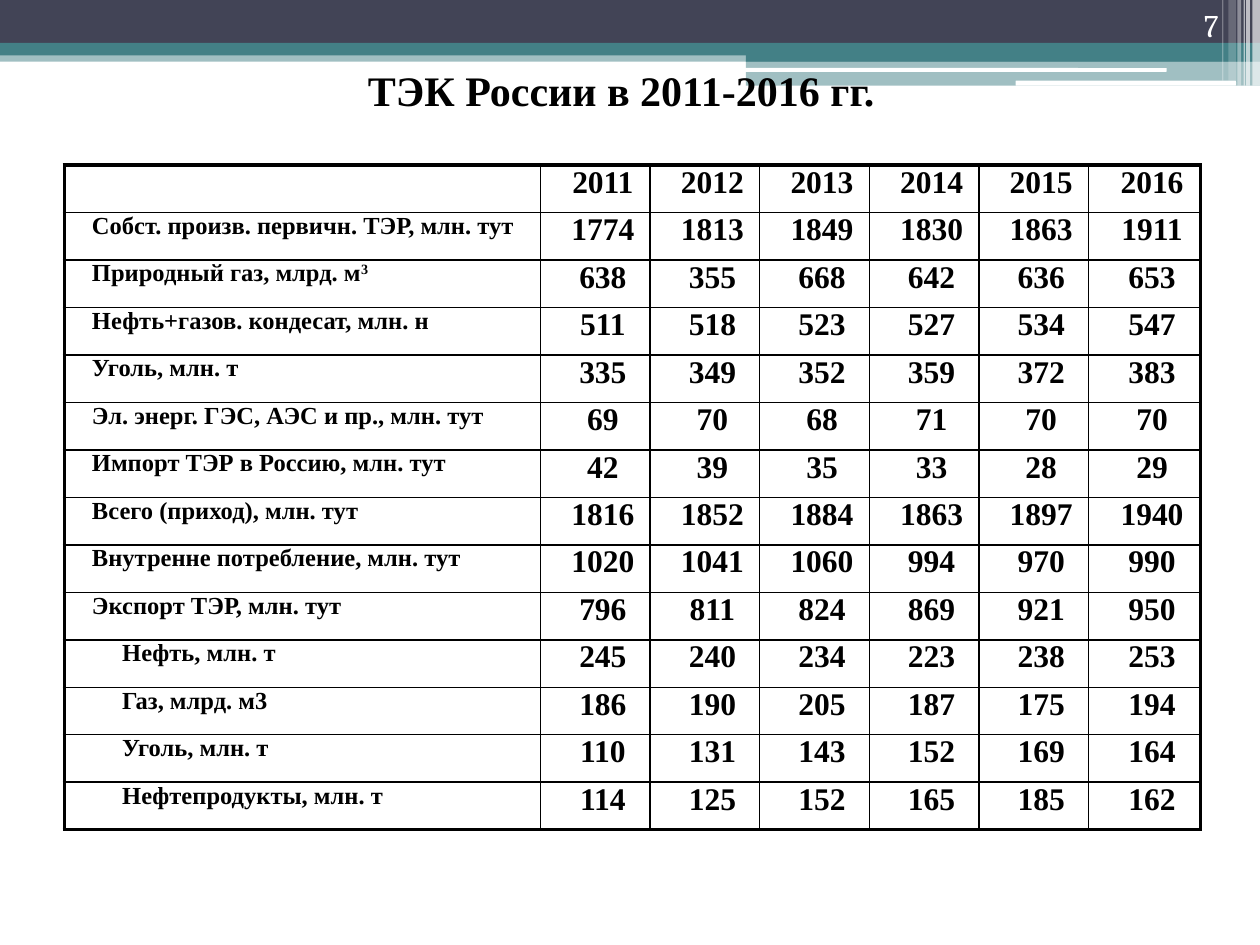
from typing import NamedTuple

import pptx
import pptx.dml.color
import pptx.enum.shapes
import pptx.enum.text
import pptx.oxml
import pptx.oxml.ns
import pptx.util
from pptx.util import Inches

COLORS = {"slate": "424456", "teal": "438086", "white": "FFFFFF", "black": "000000"}
SERIF = "Times New Roman"
ALIGN = pptx.enum.text.PP_ALIGN
ANCHOR = pptx.enum.text.MSO_ANCHOR
SHAPE = pptx.enum.shapes.MSO_SHAPE


class Band(NamedTuple):
    left: float
    top: float
    width: float
    height: float
    color: str
    opacity: int = 100
    rounded: bool = False


class Indicator(NamedTuple):
    label: str
    values: tuple
    superscript: str = ""
    nested: bool = False


BANDS = [
    Band(0, 0.4, 10, 0.09, "teal", 50),
    Band(0, 0, 10, 0.34, "slate"),
    Band(0, 0.34, 10, 0.1, "teal"),
    Band(5.92, 0.39, 4.08, 0.1, "teal"),
    Band(5.92, 0.48, 4.08, 0.2, "teal", 50),
    Band(5.91, 0.54, 3.35, 0.03, "white", rounded=True),
    Band(8.06, 0.64, 1.75, 0.04, "white", rounded=True),
    Band(9.94, 0, 0.06, 0.68, "white", 65),
    Band(9.89, 0, 0.03, 0.68, "white", 65),
    Band(9.87, 0, 0.01, 0.68, "white", 60),
    Band(9.82, 0, 0.03, 0.68, "white", 40),
    Band(9.75, 0, 0.06, 0.64, "white", 20),
    Band(9.7, 0, 0.01, 0.64, "white", 30),
]

INDICATORS = [
    Indicator("", (2011, 2012, 2013, 2014, 2015, 2016)),
    Indicator("Собст. произв. первичн. ТЭР, млн. тут", (1774, 1813, 1849, 1830, 1863, 1911)),
    Indicator("Природный газ, млрд. м", (638, 355, 668, 642, 636, 653), superscript="3"),
    Indicator("Нефть+газов. кондесат, млн. н", (511, 518, 523, 527, 534, 547)),
    Indicator("Уголь, млн. т", (335, 349, 352, 359, 372, 383)),
    Indicator("Эл. энерг. ГЭС, АЭС и пр., млн. тут", (69, 70, 68, 71, 70, 70)),
    Indicator("Импорт ТЭР в Россию, млн. тут", (42, 39, 35, 33, 28, 29)),
    Indicator("Всего (приход), млн. тут", (1816, 1852, 1884, 1863, 1897, 1940)),
    Indicator("Внутренне потребление, млн. тут", (1020, 1041, 1060, 994, 970, 990)),
    Indicator("Экспорт ТЭР, млн. тут", (796, 811, 824, 869, 921, 950)),
    Indicator("Нефть, млн. т", (245, 240, 234, 223, 238, 253), nested=True),
    Indicator("Газ, млрд. м3", (186, 190, 205, 187, 175, 194), nested=True),
    Indicator("Уголь, млн. т", (110, 131, 143, 152, 169, 164), nested=True),
    Indicator("Нефтепродукты, млн. т", (114, 125, 152, 165, 185, 162), nested=True),
]
COLUMN_WIDTHS = [3.78] + [0.87] * 5 + [0.89]
TABLE_HEIGHT = 5.28


def rgb(color: str) -> pptx.dml.color.RGBColor:
    return pptx.dml.color.RGBColor.from_string(COLORS[color])


def format_runs(paragraph, size: float, font: str = SERIF, color: str = "black",
                bold: bool = True) -> None:
    for run in paragraph.runs:
        run.font.size = pptx.util.Pt(size)
        run.font.name = font
        run.font.bold = bold
        run.font.color.rgb = rgb(color)


def draw_band(slide, band: Band) -> None:
    kind = SHAPE.ROUNDED_RECTANGLE if band.rounded else SHAPE.RECTANGLE
    bar = slide.shapes.add_shape(kind, *map(Inches, band[:4]))
    bar.shadow.inherit = False
    bar.line.fill.background()
    bar.fill.solid()
    bar.fill.fore_color.rgb = rgb(band.color)
    if band.opacity < 100:
        tint = bar.fill._xPr.find(".//" + pptx.oxml.ns.qn("a:srgbClr"))
        tint.append(pptx.oxml.parse_xml(
            f'<a:alpha {pptx.oxml.ns.nsdecls("a")} val="{band.opacity * 1000}"/>'))


def draw_text(slide, text: str, box: tuple, align, anchor, **style) -> None:
    frame = slide.shapes.add_textbox(*map(Inches, box)).text_frame
    frame.word_wrap = True
    frame.vertical_anchor = anchor
    frame.text = text
    frame.paragraphs[0].alignment = align
    format_runs(frame.paragraphs[0], **style)


def set_borders(cell, row: int, column: int) -> None:
    """Heavy lines on the outer edge of the table, thin ones inside."""
    outer_edges = {
        "L": column == 0,
        "R": column == len(COLUMN_WIDTHS) - 1,
        "T": row == 0,
        "B": row == len(INDICATORS) - 1,
    }
    properties = cell._tc.get_or_add_tcPr()
    for side, is_outer in outer_edges.items():
        width = pptx.util.Pt(2.25 if is_outer else 1)
        properties.append(pptx.oxml.parse_xml(
            f'<a:ln{side} {pptx.oxml.ns.nsdecls("a")} w="{width}"><a:solidFill>'
            f'<a:srgbClr val="{COLORS["black"]}"/></a:solidFill></a:ln{side}>'))


def fill_cell(cell, text: str, size: float, align, indent: float,
              superscript: str = "") -> None:
    cell.margin_top = cell.margin_bottom = 0
    cell.fill.background()
    cell.text_frame.text = text
    paragraph = cell.text_frame.paragraphs[0]
    paragraph.alignment = align
    paragraph.space_before = pptx.util.Pt(3)
    paragraph._p.get_or_add_pPr().set("marL", str(Inches(indent)))
    if superscript:
        exponent = paragraph.add_run()
        exponent.text = superscript
        exponent.font._element.set("baseline", "30000")
    format_runs(paragraph, size)


def draw_table(slide) -> None:
    table = slide.shapes.add_table(
        len(INDICATORS), len(COLUMN_WIDTHS), Inches(0.51), Inches(1.31),
        Inches(sum(COLUMN_WIDTHS)), Inches(TABLE_HEIGHT)).table
    table.first_row = table.horz_banding = False
    for column, width in zip(table.columns, COLUMN_WIDTHS):
        column.width = Inches(width)
    for row, indicator in enumerate(INDICATORS):
        table.rows[row].height = Inches(TABLE_HEIGHT / len(INDICATORS))
        label_indent = 0.36 if indicator.nested else 0.12
        fill_cell(table.cell(row, 0), indicator.label, 14, ALIGN.LEFT, label_indent,
                  indicator.superscript)
        for column, value in enumerate(indicator.values, start=1):
            fill_cell(table.cell(row, column), str(value), 18, ALIGN.CENTER, 0.12)
        for column in range(len(COLUMN_WIDTHS)):
            set_borders(table.cell(row, column), row, column)
            # The schema wants the fill after the border lines.
            table.cell(row, column).fill.background()


def main() -> None:
    presentation = pptx.Presentation()
    presentation.slide_width, presentation.slide_height = Inches(10), Inches(7.5)
    slide = presentation.slides.add_slide(presentation.slide_layouts[6])
    for band in BANDS:
        draw_band(slide, band)
    draw_text(slide, "7", (8.94, 0, 0.83, 0.4), ALIGN.RIGHT, ANCHOR.BOTTOM,
              size=18, font="Cambria", color="white", bold=False)
    draw_text(slide, "ТЭК России в 2011-2016 гг.", (0.43, 0.44, 9, 0.55),
              ALIGN.CENTER, ANCHOR.MIDDLE, size=24)
    draw_table(slide)
    presentation.save("out.pptx")


if __name__ == "__main__":
    main()
